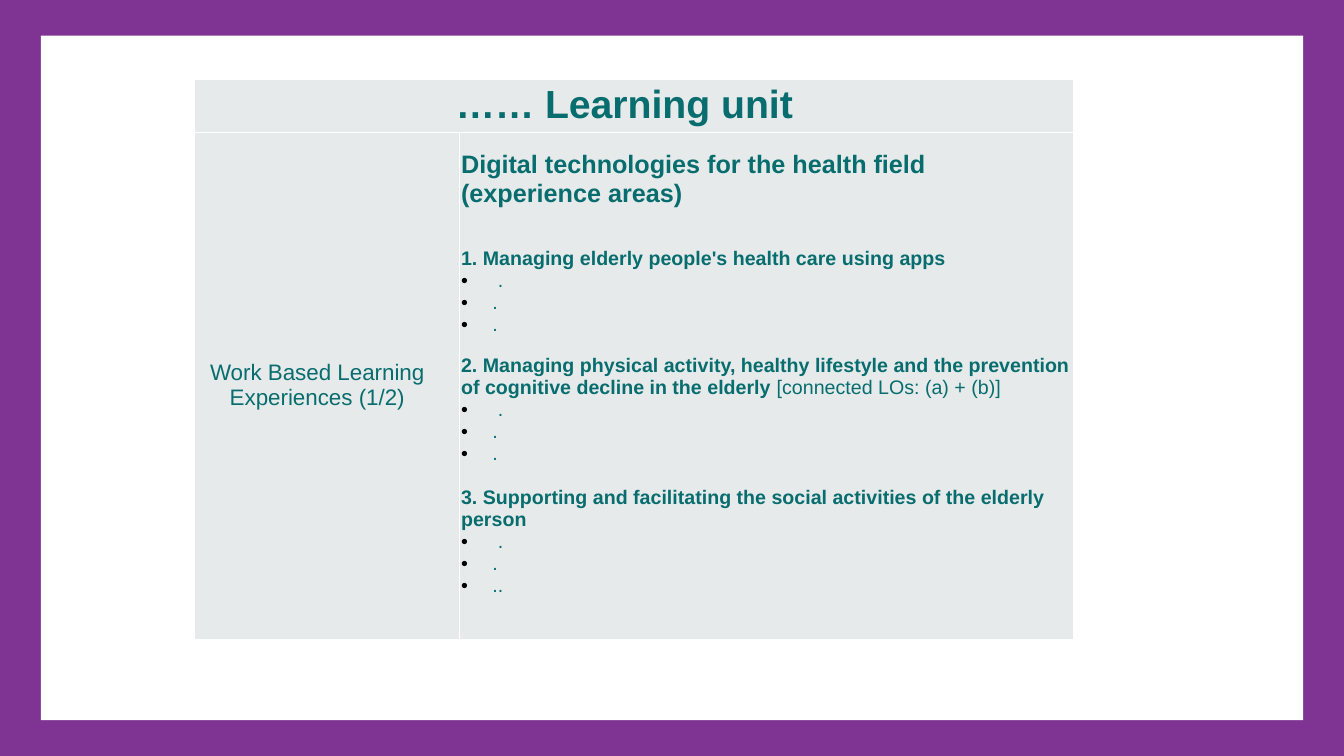
"""Build the learning unit slide with its table of experience areas."""
from lxml.etree import SubElement
from pptx import Presentation
from pptx.dml.color import RGBColor
from pptx.enum.shapes import MSO_SHAPE
from pptx.enum.text import MSO_ANCHOR, PP_ALIGN
from pptx.oxml import parse_xml
from pptx.oxml.ns import nsdecls, qn
from pptx.util import Cm, Pt

PURPLE = RGBColor(0x7F, 0x34, 0x94)
WHITE = RGBColor(0xFF, 0xFF, 0xFF)
BLACK = RGBColor(0, 0, 0)
TEAL = RGBColor(0x08, 0x6D, 0x6E)
PALE_GREY = RGBColor(0xE6, 0xEA, 0xEA)

HEADER = "…… Learning unit"
LABEL = "Work Based Learning Experiences (1/2)"
FIELD = "Digital technologies for the health field (experience areas)"
AREAS = [
    ("1. Managing elderly people's health care using apps", "",
     [" .", ".", "."], 28.5),
    ("2. Managing physical activity, healthy lifestyle and the prevention "
     "of cognitive decline in the elderly ", "[connected LOs: (a) + (b)]",
     [" .", ".", "."], 13.5),
    ("3. Supporting and facilitating the social activities of the elderly "
     "person", "", [" .", ".", ".."], 16),
]

SLIDE_WIDTH, SLIDE_HEIGHT = Cm(33.87), Cm(19.05)
FRAME_X, FRAME_Y = Cm(1.03), Cm(0.9)
TABLE_LEFT, TABLE_TOP = Cm(4.91), Cm(1.99)
COLUMN_WIDTHS = [Cm(6.66), Cm(15.48)]
ROW_HEIGHTS = [Cm(1.35), Cm(12.78)]
BULLET_INDENT = Cm(0.79)

CELL_FORMAT = {"vertical_anchor": MSO_ANCHOR.MIDDLE, "margin_left": Cm(0.05),
               "margin_right": Cm(0.05), "margin_top": 0,
               "margin_bottom": Cm(0.05)}
CENTRED_CELL_FORMAT = {"margin_right": Cm(0.54)}
AREAS_CELL_FORMAT = {"margin_bottom": Cm(0.61)}
HEADER_FONT = {"size": Pt(28), "bold": True}
LABEL_FONT = {"size": Pt(16), "bold": False}
FIELD_FONT = {"size": Pt(18), "bold": True}
AREA_FONT = {"size": Pt(14), "bold": True}
DETAIL_FONT = {"size": Pt(14), "bold": False}


def apply_format(target, values):
    """Set every attribute named in values."""
    for name, value in values.items():
        setattr(target, name, value)


def add_run(paragraph, wording, font_format):
    """Add one teal Arial run."""
    run = paragraph.add_run()
    run.text = wording
    apply_format(run.font, {"name": "Arial", **font_format})
    run.font.color.rgb = TEAL


def add_panel(slide, left, top, width, height, color):
    """Draw a plain rectangle without outline."""
    panel = slide.shapes.add_shape(MSO_SHAPE.RECTANGLE, left, top, width, height)
    panel.shadow.inherit = False
    panel.fill.solid()
    panel.fill.fore_color.rgb = color
    panel.line.fill.background()


def add_bullet(paragraph):
    """Give a paragraph a black bullet with a hanging indent."""
    properties = paragraph._p.get_or_add_pPr()
    properties.set("marL", str(BULLET_INDENT))
    properties.set("indent", str(-BULLET_INDENT))
    bullet_color = SubElement(properties, qn("a:buClr"))
    SubElement(bullet_color, qn("a:srgbClr"), val=str(BLACK))
    SubElement(properties, qn("a:buFont"), typeface="Arial")
    SubElement(properties, qn("a:buChar"), char="•")


def style_cell(cell):
    """Set fill, margins and white borders of a cell."""
    apply_format(cell, CELL_FORMAT)
    cell.fill.solid()
    cell.fill.fore_color.rgb = PALE_GREY
    properties = cell._tc.get_or_add_tcPr()
    for position, edge in enumerate(("lnL", "lnR", "lnT", "lnB")):
        properties.insert(position, parse_xml(
            f'<a:{edge} {nsdecls("a")} w="{Pt(1)}"><a:solidFill>'
            f'<a:srgbClr val="{WHITE}"/></a:solidFill></a:{edge}>'))


def fill_areas(cell):
    """Write the field heading and its numbered areas."""
    apply_format(cell, AREAS_CELL_FORMAT)
    frame = cell.text_frame
    add_run(frame.paragraphs[0], FIELD, FIELD_FONT)
    for title, remark, details, gap in AREAS:
        heading = frame.add_paragraph()
        heading.space_before = Pt(gap)
        add_run(heading, title, AREA_FONT)
        if remark:
            add_run(heading, remark, DETAIL_FONT)
        for detail in details:
            item = frame.add_paragraph()
            add_bullet(item)
            add_run(item, detail, DETAIL_FONT)


def main():
    """Create the slide and save it."""
    deck = Presentation()
    apply_format(deck, {"slide_width": SLIDE_WIDTH, "slide_height": SLIDE_HEIGHT})
    slide = deck.slides.add_slide(deck.slide_layouts[6])
    add_panel(slide, 0, 0, SLIDE_WIDTH, SLIDE_HEIGHT, PURPLE)
    add_panel(slide, FRAME_X, FRAME_Y, SLIDE_WIDTH - 2 * FRAME_X,
              SLIDE_HEIGHT - 2 * FRAME_Y, WHITE)

    unit = slide.shapes.add_table(2, 2, TABLE_LEFT, TABLE_TOP, sum(COLUMN_WIDTHS),
                                  sum(ROW_HEIGHTS)).table
    apply_format(unit, {"first_row": False, "horz_banding": False})
    for column, width in zip(unit.columns, COLUMN_WIDTHS):
        column.width = width
    for row, height in zip(unit.rows, ROW_HEIGHTS):
        row.height = height
    for cell in unit.iter_cells():
        style_cell(cell)
    unit.cell(0, 0).merge(unit.cell(0, 1))

    for row, (wording, font) in enumerate([(HEADER, HEADER_FONT),
                                           (LABEL, LABEL_FONT)]):
        cell = unit.cell(row, 0)
        apply_format(cell, CENTRED_CELL_FORMAT)
        paragraph = cell.text_frame.paragraphs[0]
        paragraph.alignment = PP_ALIGN.CENTER
        add_run(paragraph, wording, font)
    fill_areas(unit.cell(1, 1))
    deck.save("out.pptx")


if __name__ == "__main__":
    main()
